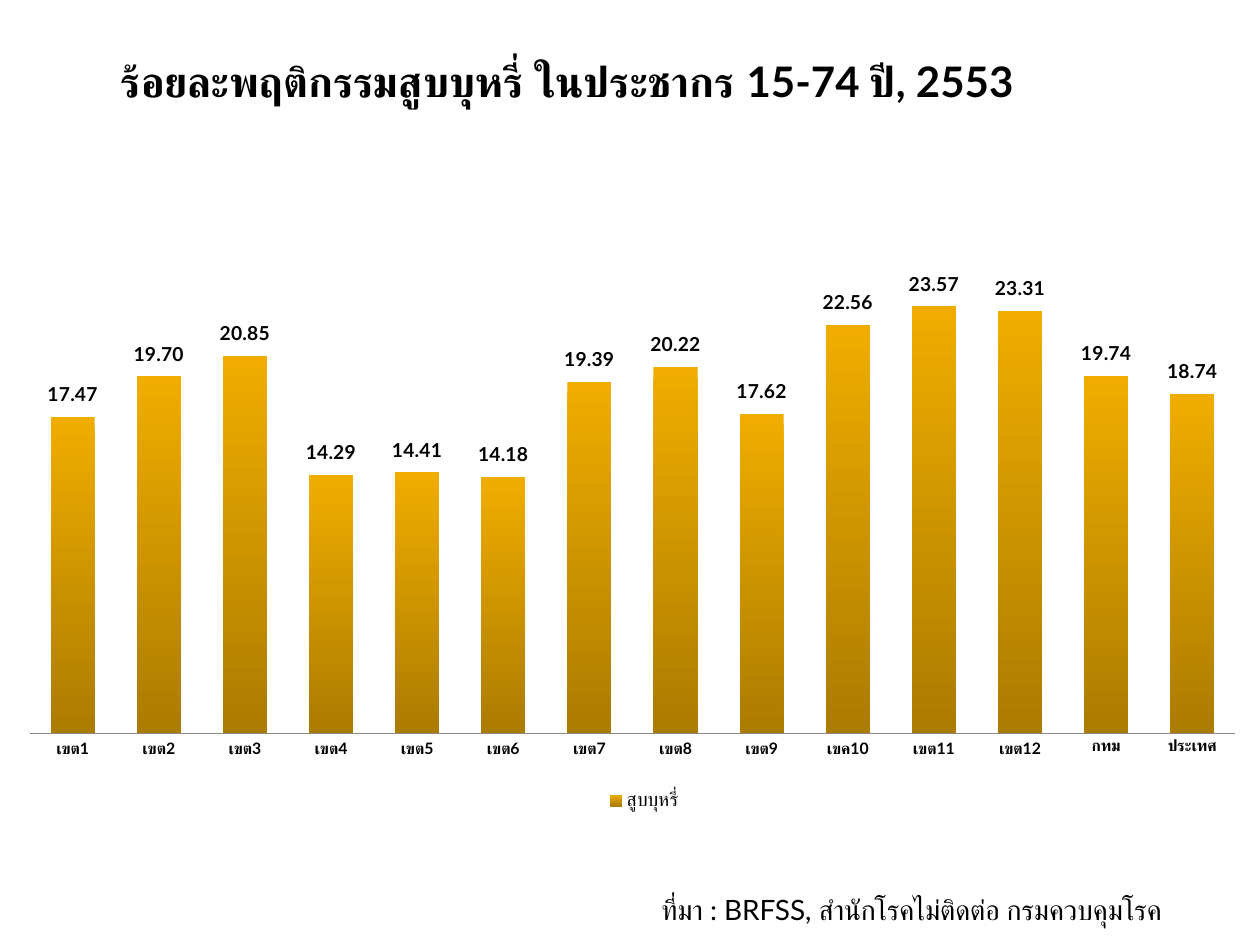
from lxml import etree
from pptx import Presentation
from pptx.chart.data import CategoryChartData
from pptx.dml.color import RGBColor
from pptx.enum.chart import XL_CHART_TYPE as ChartType, XL_LABEL_POSITION as LabelPos
from pptx.enum.chart import XL_LEGEND_POSITION as LegendPos, XL_TICK_MARK as Tick
from pptx.enum.text import MSO_ANCHOR as Anchor, PP_ALIGN as Align
from pptx.oxml import parse_xml
from pptx.oxml.ns import nsdecls, qn
from pptx.util import Inches, Pt

TITLE = "ร้อยละพฤติกรรมสูบบุหรี่ ในประชากร 15-74 ปี, 2553"
SOURCE = "ที่มา : BRFSS, สำนักโรคไม่ติดต่อ กรมควบคุมโรค"
SERIES = "สูบบุหรี่"
SMOKING = [
    ("เขต1", 17.47), ("เขต2", 19.70), ("เขต3", 20.85), ("เขต4", 14.29),
    ("เขต5", 14.41), ("เขต6", 14.18), ("เขต7", 19.39), ("เขต8", 20.22),
    ("เขต9", 17.62), ("เขค10", 22.56), ("เขต11", 23.57), ("เขต12", 23.31),
    ("กทม", 19.74), ("ประเทศ", 18.74),
]
COLORS = {"text": "000000", "bar_top": "F0AD00", "bar_bottom": "AC7C00", "axis": "888888"}
FONT = "Lato"
AXIS_MAX = 25
NUMBER_FORMAT = "0.00"
PLOT = {"x": 0, "y": 0.06, "w": 0.98, "h": 0.78}
LEGEND = {"x": 0.46, "y": 0.93, "w": 0.08, "h": 0.05}
LABEL_GAP = 0.04
NO_LEADERS = (
    f'<c:extLst {nsdecls("c")}><c:ext uri="{{CE6537A1-D6FC-4f65-9D91-7224C49458BB}}"'
    ' xmlns:c15="http://schemas.microsoft.com/office/drawing/2012/chart">'
    '<c15:showLeaderLines val="0"/></c:ext></c:extLst>'
)


def rgb(name):
    return RGBColor.from_string(COLORS[name])


def style(font, size, bold=False):
    for key, value in {"name": FONT, "size": Pt(size), "bold": bold}.items():
        setattr(font, key, value)
    font.color.rgb = rgb("text")


def write(shape, box, text, size, bold=False):
    for key, value in zip(("left", "top", "width", "height"), box):
        setattr(shape, key, Inches(value))
    tf = shape.text_frame
    tf.word_wrap = False
    tf.vertical_anchor = Anchor.MIDDLE
    p = tf.paragraphs[0]
    p.alignment = Align.LEFT
    r = p.add_run()
    r.text = text
    style(r.font, size, bold)


def layout(values, inner=False, edge=False):
    root = etree.Element(qn("c:layout"))
    manual = etree.SubElement(root, qn("c:manualLayout"))
    items = [("layoutTarget", "inner")] if inner else []
    items += [("xMode", "edge"), ("yMode", "edge")] if edge else []
    for tag, value in items + list(values.items()):
        etree.SubElement(manual, qn(f"c:{tag}")).set("val", str(value))
    return root


def place(parent, new):
    old = parent.find(qn("c:layout"))
    if old is not None:
        parent.remove(old)
    parent.insert(0 if parent.tag == qn("c:plotArea") else 1, new)


def hide_leader_lines(labels):
    for line in labels.findall(qn("c:showLeaderLines")):
        line.set("val", "0")
    labels.append(parse_xml(NO_LEADERS))


def add_labels(series):
    labels = series.data_labels
    labels.show_value = True
    labels.number_format = NUMBER_FORMAT
    labels.number_format_is_linked = False
    style(labels.font, 11, True)
    for i in range(len(SMOKING)):
        label = series.points[i].data_label
        style(label.font, 11, True)
        label.position = LabelPos.CENTER
    for label, (_, value) in zip(series._element.iter(qn("c:dLbl")), SMOKING):
        rise = value / AXIS_MAX * PLOT["h"] / 2 + LABEL_GAP
        place(label, layout({"x": 0, "y": round(-rise, 4)}))
        fmt = etree.Element(qn("c:numFmt"), formatCode=NUMBER_FORMAT, sourceLinked="0")
        label.insert(2, fmt)
    hide_leader_lines(series._element.find(qn("c:dLbls")))


def add_bars(s):
    data = CategoryChartData(number_format=NUMBER_FORMAT)
    data.categories = [name for name, _ in SMOKING]
    data.add_series(SERIES, [value for _, value in SMOKING])
    box = [Inches(v) for v in (0.23, 1.95, 9.77, 4.61)]
    chart = s.shapes.add_chart(ChartType.COLUMN_STACKED, *box, data).chart
    chart.has_title = False
    chart.font.name = "Cabin"
    chart.font.size = Pt(10)

    cat, val = chart.category_axis, chart.value_axis
    cat.major_tick_mark = cat.minor_tick_mark = Tick.NONE
    cat.format.line.color.rgb = rgb("axis")
    style(cat.tick_labels.font, 9, True)
    val.minimum_scale, val.maximum_scale = 0, AXIS_MAX
    val.has_major_gridlines = False
    val.tick_labels.number_format = NUMBER_FORMAT
    val.visible = False

    chart.has_legend = True
    chart.legend.position = LegendPos.TOP
    chart.legend.include_in_layout = False
    style(chart.legend.font, 11)
    place(chart.legend._element, layout(LEGEND, edge=True))
    place(chart._chartSpace.chart.plotArea, layout(PLOT, inner=True, edge=True))

    plot = chart.plots[0]
    plot.gap_width, plot.overlap, plot.vary_by_categories = 95, 100, False
    series = plot.series[0]
    fill = series.format.fill
    fill.gradient()
    fill.gradient_angle = 270
    for stop, name, position in zip(fill.gradient_stops, ("bar_top", "bar_bottom"), (0, 1)):
        stop.color.rgb = rgb(name)
        stop.position = position
    add_labels(series)


def main():
    prs = Presentation()
    prs.slide_width, prs.slide_height = Inches(10), Inches(7.5)
    s = prs.slides.add_slide(prs.slide_layouts[5])
    add_bars(s)
    write(s.shapes.title, (0.86, 0.39, 8.2, 0.5), TITLE, 24, True)
    write(s.shapes.add_textbox(0, 0, 0, 0), (5.15, 7.03, 4.7, 0.37), SOURCE, 16)
    prs.save("out.pptx")


if __name__ == "__main__":
    main()
